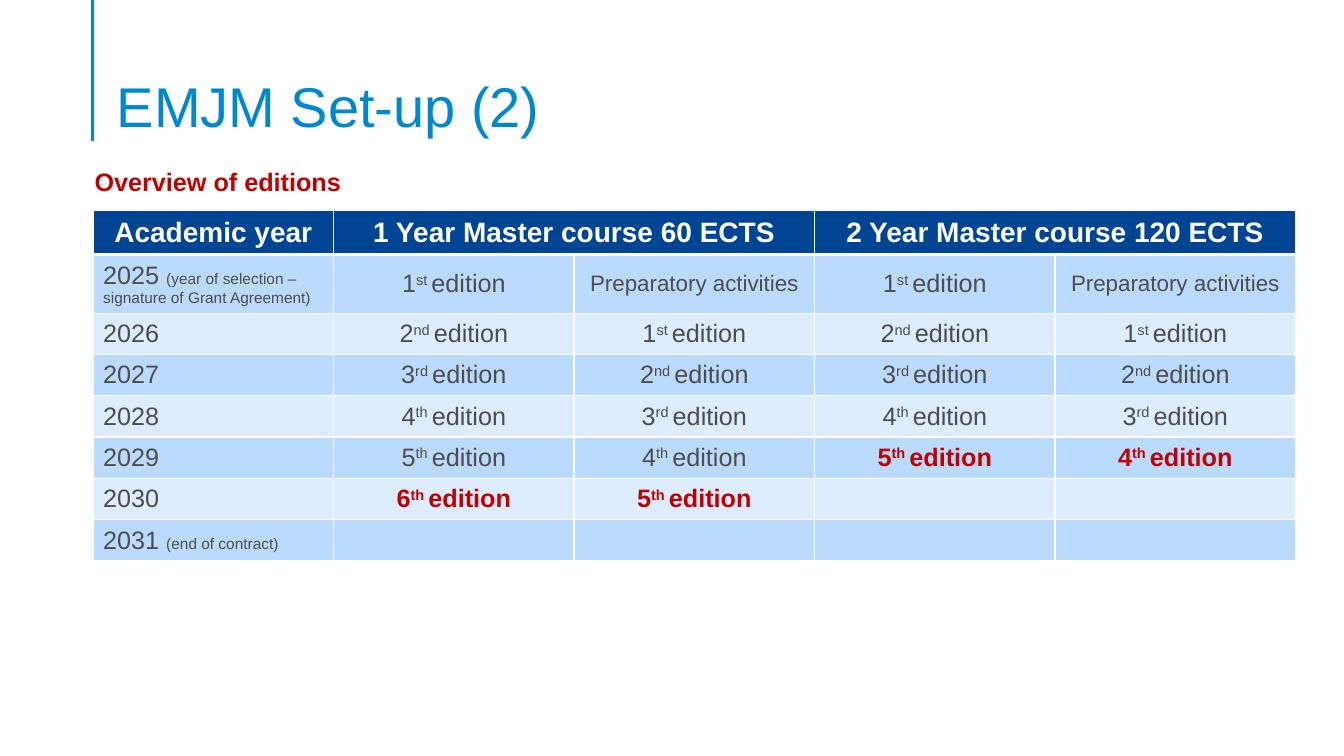
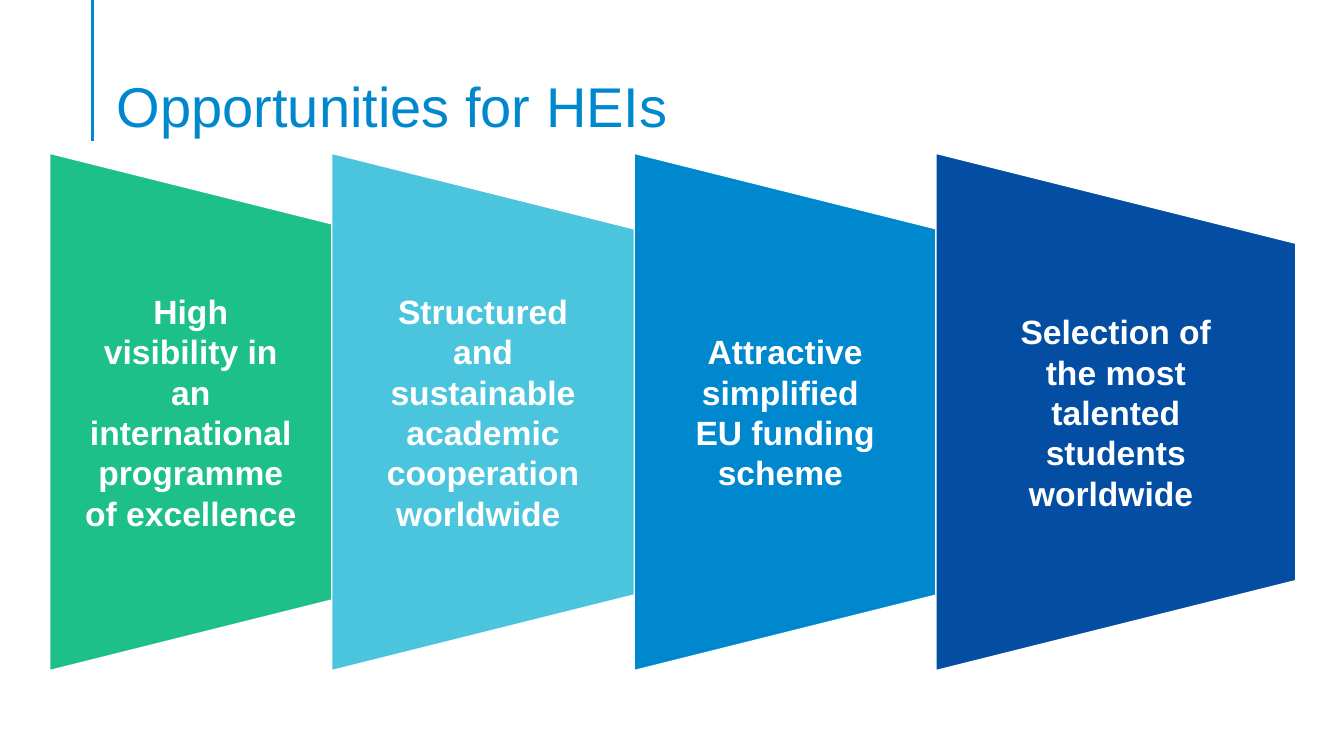
"""Build two slides on the editions and opportunities of EMJM programmes."""
from dataclasses import dataclass

from lxml import etree
from pptx import Presentation
from pptx.dml.color import RGBColor
from pptx.enum.shapes import MSO_CONNECTOR, MSO_SHAPE
from pptx.enum.text import MSO_ANCHOR, PP_ALIGN
from pptx.oxml.ns import qn
from pptx.util import Pt

STRAIGHT = MSO_CONNECTOR.STRAIGHT
TRAPEZOID = MSO_SHAPE.TRAPEZOID
TOP, MIDDLE, BOTTOM = MSO_ANCHOR.TOP, MSO_ANCHOR.MIDDLE, MSO_ANCHOR.BOTTOM
LEFT, CENTER = PP_ALIGN.LEFT, PP_ALIGN.CENTER


@dataclass(frozen=True)
class Theme:
    """Colours, font and type sizes of the presentation."""
    font: str = "Arial"
    blue: str = "0088CE"
    navy: str = "004494"
    royal: str = "034EA2"
    green: str = "1EC08A"
    aqua: str = "4BC5DE"
    red: str = "C00000"
    grey: str = "4D4D4D"
    white: str = "FFFFFF"
    bands: tuple = ("BBDBFE", "DDEDFF")
    title: int = 40
    panel: int = 24
    header: int = 20
    body: int = 18
    small: int = 16
    note: int = 11


T = Theme()
TITLE = {"size": Pt(T.title), "color": T.blue, "bold": False}
SUBTITLE = {"size": Pt(T.body), "color": T.red, "bold": True}
PANEL = {"size": Pt(T.panel), "color": T.white, "bold": True}
HEADER = {"size": Pt(T.header), "color": T.white, "bold": True}
BODY = {"size": Pt(T.body), "color": T.grey, "bold": False}
SMALL = {**BODY, "size": Pt(T.small)}
NOTE = {**BODY, "size": Pt(T.note)}
LAST = {**BODY, "color": T.red, "bold": True}

SUFFIXES = {1: "st", 2: "nd", 3: "rd"}
COURSES = [("1 Year Master course 60 ECTS", 6), ("2 Year Master course 120 ECTS", 5)]
YEARS = range(2025, 2032)
YEAR_NOTES = {2025: "(year of selection – signature of Grant Agreement)",
              2031: "(end of contract)"}
PANELS = [
    (35.5, T.green, ["High visibility in an international programme of excellence"]),
    (237, T.aqua, ["Structured and sustainable academic cooperation worldwide "]),
    (453, T.blue, ["Attractive simplified ", "EU funding scheme "]),
    (668.5, T.royal, ["Selection of the most talented students worldwide "]),
]


def rgb(color):
    """Turn a hex string into a colour."""
    return RGBColor.from_string(color)


def add_run(p, text, style, raised=False):
    """Add a run with a style to a paragraph."""
    r = p.add_run()
    r.text = text
    r.font.name = T.font
    for name, value in style.items():
        if name == "color":
            r.font.color.rgb = rgb(value)
        else:
            setattr(r.font, name, value)
    if raised:
        r._r.get_or_add_rPr().set("baseline", "30000")


def add_text(s, box, lines, style, align=LEFT, wrap=True, **frame):
    """Add a text box with one paragraph for each line."""
    tf = s.shapes.add_textbox(*map(Pt, box)).text_frame
    tf.word_wrap = wrap
    for name, value in frame.items():
        setattr(tf, name, value)
    for i, line in enumerate(lines):
        p = tf.add_paragraph() if i else tf.paragraphs[0]
        p.alignment = align
        add_run(p, line, style)
    return tf


def add_slide(prs, title):
    """Add a slide with the vertical rule and a title."""
    s = prs.slides.add_slide(prs.slide_layouts[6])
    rule = s.shapes.add_connector(STRAIGHT, Pt(66), Pt(0), Pt(66), Pt(101))
    rule.line.color.rgb = rgb(T.blue)
    rule.line.width = Pt(2.25)
    etree.SubElement(rule._element.spPr, qn("a:effectLst"))
    tf = add_text(s, (76.5, 38, 828, 62), [title], TITLE,
                  vertical_anchor=BOTTOM, margin_bottom=0)
    tf.paragraphs[0].line_spacing = 0.9
    return s


def format_cell(cell, fill, bottom=1):
    """Fill a cell and draw its white borders."""
    tcPr = cell._tc.get_or_add_tcPr()
    for side in "LRTB":
        width = bottom if side == "B" else 1
        ln = etree.SubElement(tcPr, qn(f"a:ln{side}"), w=str(Pt(width)))
        solid = etree.SubElement(ln, qn("a:solidFill"))
        etree.SubElement(solid, qn("a:srgbClr"), val=T.white)
    cell.fill.solid()
    cell.fill.fore_color.rgb = rgb(fill)
    cell.vertical_anchor = MIDDLE


def write_edition(p, number, last):
    """Write an ordinal edition, or the preparatory stage for zero."""
    if number == 0:
        add_run(p, "Preparatory activities", SMALL)
        return
    style = LAST if last else BODY
    add_run(p, str(number), style)
    add_run(p, SUFFIXES.get(number, "th") + " ", style, raised=True)
    add_run(p, "edition", style)


def add_header(table):
    """Write the header row, with each course over two columns."""
    for cell in table.rows[0].cells:
        format_cell(cell, T.navy, bottom=3)
    titles = {0: "Academic year"}
    for i, (course, _) in enumerate(COURSES):
        col = 1 + 2 * i
        table.cell(0, col).merge(table.cell(0, col + 1))
        titles[col] = course
    for col, title in titles.items():
        p = table.cell(0, col).text_frame.paragraphs[0]
        p.alignment = CENTER
        add_run(p, title, HEADER)


def add_year(table, i, year):
    """Write the editions running in one academic year."""
    cells = table.rows[i + 1].cells
    for cell in cells:
        format_cell(cell, T.bands[i % 2])
    p = cells[0].text_frame.paragraphs[0]
    if year in YEAR_NOTES:
        add_run(p, f"{year} ", BODY)
        add_run(p, YEAR_NOTES[year], NOTE)
    else:
        add_run(p, str(year), BODY)
    for c, (_, count) in enumerate(COURSES):
        if i >= count:
            continue
        for k, number in enumerate((i + 1, i)):
            p = cells[1 + 2 * c + k].text_frame.paragraphs[0]
            p.alignment = CENTER
            write_edition(p, number, i + 1 == count)


def add_editions(s):
    """Add the table of editions by academic year."""
    heights = [30, 40] + [29.5] * (len(YEARS) - 1)
    cols = 1 + 2 * len(COURSES)
    table = s.shapes.add_table(len(heights), cols, Pt(66.5), Pt(150.5),
                               Pt(859), Pt(sum(heights))).table
    table.horz_banding = False
    for row, height in zip(table.rows, heights):
        row.height = Pt(height)
    add_header(table)
    for i, year in enumerate(YEARS):
        add_year(table, i, year)


def add_panels(s):
    """Add overlapping trapezoids, each label centred on the visible part."""
    top, width, height, label = 109.5, 257, 369.5, 165
    for left, color, _ in PANELS:
        sp = s.shapes.add_shape(TRAPEZOID, Pt(left + (width - height) / 2),
                                Pt(top + (height - width) / 2), Pt(height), Pt(width))
        sp.rotation = 90
        sp.shadow.inherit = False
        sp.fill.solid()
        sp.fill.fore_color.rgb = rgb(color)
        sp.line.color.rgb = rgb(T.white)
        sp.line.width = Pt(1)
    edges = [left for left, _, _ in PANELS] + [PANELS[-1][0] + width]
    for (left, _, lines), right in zip(PANELS, edges[1:]):
        add_text(s, ((left + right - label) / 2, top, label, height), lines,
                 PANEL, CENTER, vertical_anchor=MIDDLE)


def main():
    """Build and save the presentation."""
    prs = Presentation()
    prs.slide_width, prs.slide_height = Pt(960), Pt(540)
    s = add_slide(prs, "EMJM Set-up (2)")
    add_editions(s)
    add_text(s, (60.5, 115, 192, 29), ["Overview of editions"], SUBTITLE,
             wrap=False, vertical_anchor=TOP)
    s = add_slide(prs, "Opportunities for HEIs")
    add_panels(s)
    prs.save("out.pptx")


if __name__ == "__main__":
    main()
